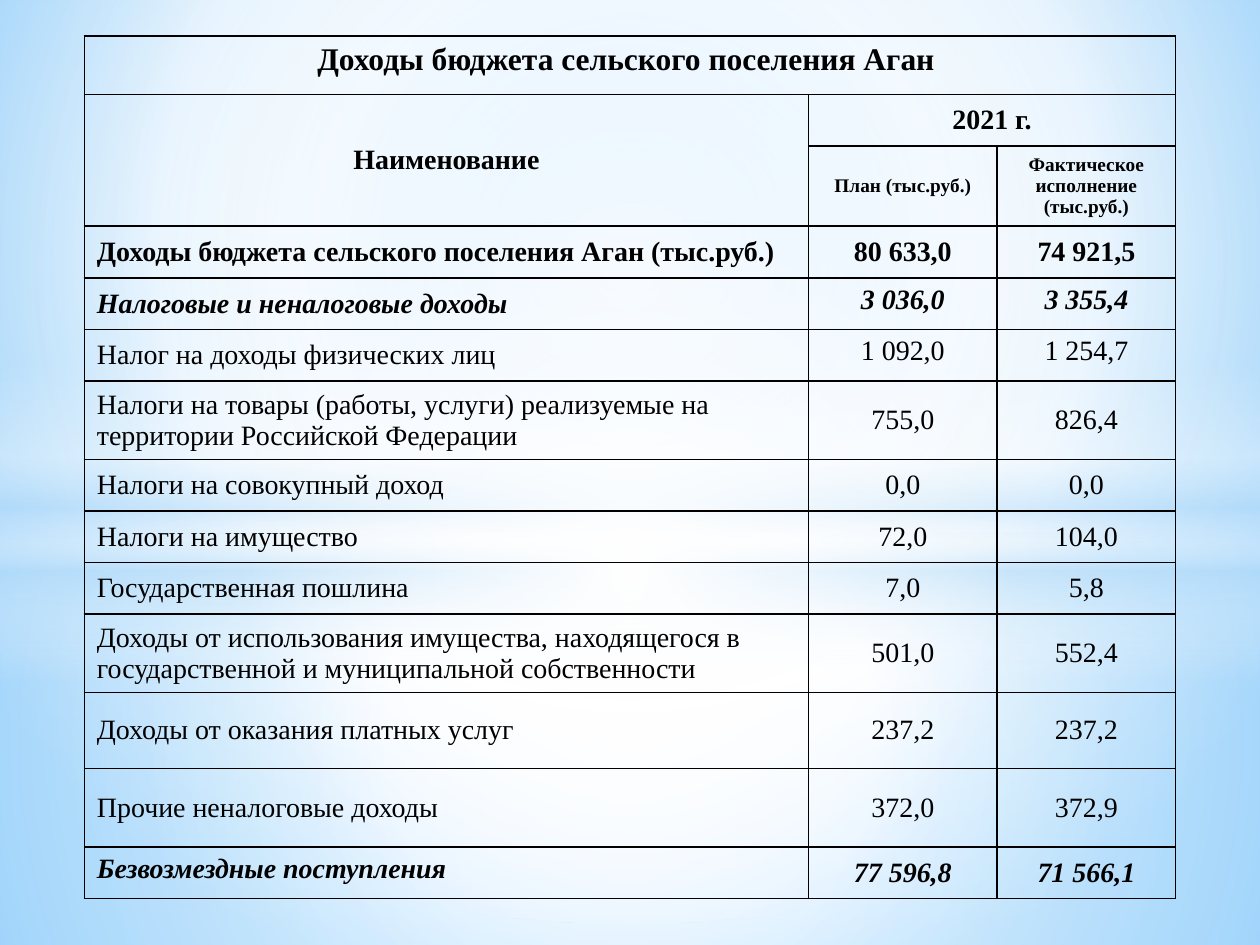
from lxml.etree import SubElement
from pptx import Presentation
from pptx.dml.color import RGBColor
from pptx.enum.shapes import MSO_SHAPE
from pptx.enum.text import MSO_ANCHOR, PP_ALIGN
from pptx.oxml.ns import qn
from pptx.oxml.xmlchemy import OxmlElement
from pptx.util import Cm, Pt

COLORS = {"text": "000000", "white": "FFFFFF", "haze": "B4DCFA", "sky": "9ED5FF", "blue": "5BB9FF"}


def apply_gradient(element, stops, center):
    gradient = OxmlElement("a:gradFill")
    stop_list = SubElement(gradient, qn("a:gsLst"))
    for position, name, opacity in stops:
        stop = SubElement(stop_list, qn("a:gs"), {"pos": str(position * 1000)})
        color = SubElement(stop, qn("a:srgbClr"), {"val": COLORS[name]})
        SubElement(color, qn("a:alpha"), {"val": str(opacity * 1000)})
    if center:
        circle = SubElement(gradient, qn("a:path"), {"path": "circle"})
        edges = {edge: str(value * 1000) for edge, value in zip("ltrb", center)}
        SubElement(circle, qn("a:fillToRect"), edges)
    else:
        SubElement(gradient, qn("a:lin"), {"ang": "5400000", "scaled": "0"})
    solid = element.find(".//" + qn("a:solidFill"))
    solid.getparent().replace(solid, gradient)


def add_borders(cell):
    properties = cell._tc.get_or_add_tcPr()
    for index, side in enumerate(("a:lnL", "a:lnR", "a:lnT", "a:lnB")):
        border = OxmlElement(side)
        border.set("w", str(Pt(1)))
        fill = SubElement(border, qn("a:solidFill"))
        SubElement(fill, qn("a:srgbClr"), {"val": COLORS["text"]})
        properties.insert(index, border)


presentation = Presentation()
presentation.slide_width, presentation.slide_height = Cm(25.4), Cm(19.05)
slide = presentation.slides.add_slide(presentation.slide_layouts[6])

slide.background.fill.solid()
apply_gradient(
    slide.element,
    [(0, "sky", 100), (60, "white", 100), (100, "blue", 100)],
    (20, 10, 20, 60),
)

middle = (50, 50, 50, 50)
glows = [
    (MSO_SHAPE.RECTANGLE, 10.74, 8.31, middle,
     [(0, "white", 91), (37, "white", 76), (100, "haze", 79)]),
    (MSO_SHAPE.RECTANGLE, 0, 10.74, middle,
     [(0, "white", 89), (48, "white", 62), (100, "haze", 79)]),
    (MSO_SHAPE.RECTANGLE, 7.37, 6.35, None,
     [(0, "white", 0), (29, "white", 30), (45, "haze", 40),
      (55, "white", 26), (65, "haze", 60), (100, "white", 0)]),
    (MSO_SHAPE.OVAL, 4.45, 14.17, middle,
     [(0, "white", 100), (54, "white", 0)]),
]
for kind, top, height, center, stops in glows:
    shape = slide.shapes.add_shape(kind, 0, Cm(top), presentation.slide_width, Cm(height))
    shape.shadow.inherit = False
    shape.line.fill.background()
    shape.fill.solid()
    apply_gradient(shape.element, stops, center)

FORMATS = {
    "title": {"size": Pt(18), "bold": True, "italic": False},
    "head": {"size": Pt(16), "bold": True, "italic": False},
    "small": {"size": Pt(11), "bold": True, "italic": False},
    "group": {"size": Pt(16), "bold": True, "italic": True},
    "item": {"size": Pt(16), "bold": False, "italic": False},
}
rows = [
    ("title", 1.17, ("Доходы бюджета сельского поселения Аган ", "", "")),
    ("head", 1.04, ("Наименование", "2021 г.", "")),
    ("small", 1.62, ("", "План (тыс.руб.)", "Фактическое исполнение (тыс.руб.)")),
    ("head", 1.04, ("Доходы бюджета сельского поселения Аган (тыс.руб.)", "80 633,0", "74 921,5")),
    ("group", 1.04, ("Налоговые и неналоговые доходы", "3 036,0", "3 355,4")),
    ("item", 1.04, ("Налог на доходы физических лиц", "1 092,0", "1 254,7")),
    ("item", 1.58, ("Налоги на товары (работы, услуги) реализуемые на территории Российской Федерации",
                    "755,0", "826,4")),
    ("item", 1.04, ("Налоги на совокупный доход", "0,0", "0,0")),
    ("item", 1.04, ("Налоги на имущество", "72,0", "104,0")),
    ("item", 1.04, ("Государственная пошлина", "7,0", "5,8")),
    ("item", 1.58, ("Доходы от использования имущества, находящегося в "
                    "государственной и муниципальной собственности", "501,0", "552,4")),
    ("item", 1.53, ("Доходы от оказания платных услуг", "237,2", "237,2")),
    ("item", 1.58, ("Прочие неналоговые доходы", "372,0", "372,9")),
    ("group", 1.04, ("Безвозмездные поступления", "77 596,8", "71 566,1")),
]
column_widths = [14.6, 3.8, 3.6]
top_anchored = {(0, 0), (4, 1), (4, 2), (5, 1), (5, 2), (13, 0)}
header_rows = 3

table = slide.shapes.add_table(
    len(rows), len(column_widths), Cm(1.7), Cm(0.73),
    Cm(sum(column_widths)), Cm(sum(height for _, height, _ in rows)),
).table
table.first_row = table.horz_banding = False
for column, width in zip(table.columns, column_widths):
    column.width = Cm(width)

for row_index, (style, height, texts) in enumerate(rows):
    table.rows[row_index].height = Cm(height)
    for column_index, text in enumerate(texts):
        cell = table.cell(row_index, column_index)
        cell.fill.background()
        add_borders(cell)
        at_top = (row_index, column_index) in top_anchored
        cell.vertical_anchor = MSO_ANCHOR.TOP if at_top else MSO_ANCHOR.MIDDLE
        paragraph = cell.text_frame.paragraphs[0]
        is_label = column_index == 0 and row_index >= header_rows
        paragraph.alignment = PP_ALIGN.LEFT if is_label else PP_ALIGN.CENTER
        if text:
            font = paragraph.add_run().font
            paragraph.runs[0].text = text
            font.name = "Times New Roman"
            font.color.rgb = RGBColor.from_string(COLORS["text"])
            for attribute, value in FORMATS[style].items():
                setattr(font, attribute, value)

for first, last in [((0, 0), (0, 2)), ((1, 0), (2, 0)), ((1, 1), (1, 2))]:
    table.cell(*first).merge(table.cell(*last))

presentation.save("out.pptx")
